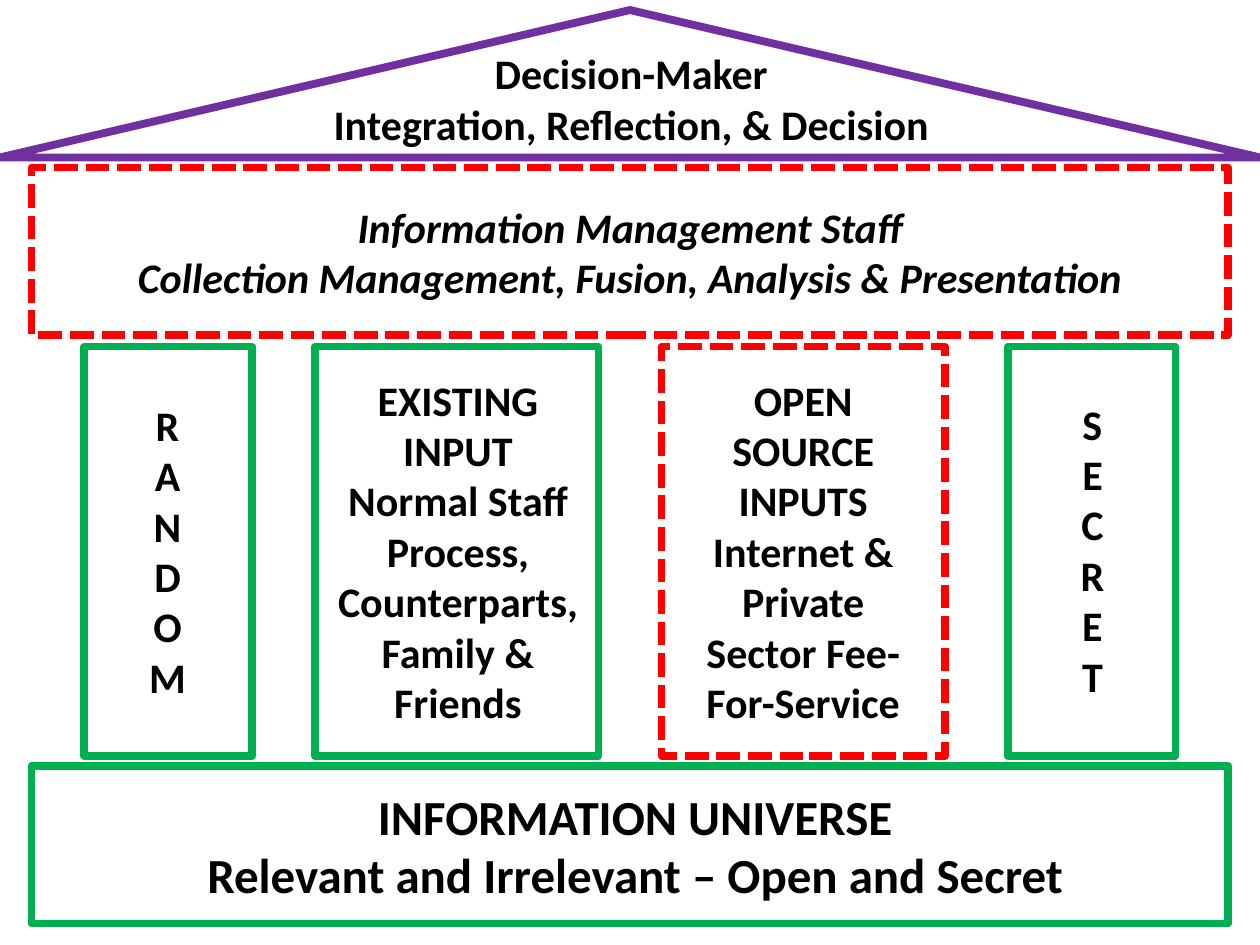
from pptx import Presentation
from pptx.dml.color import RGBColor
from pptx.enum.dml import MSO_LINE
from pptx.enum.shapes import MSO_SHAPE as Shape
from pptx.enum.text import MSO_AUTO_SIZE, PP_ALIGN
from pptx.util import Inches, Pt

PURPLE = RGBColor(0x70, 0x30, 0xA0)
RED = RGBColor(0xFF, 0x00, 0x00)
GREEN = RGBColor(0x00, 0xB0, 0x50)
BLACK = RGBColor(0x00, 0x00, 0x00)

PILLAR_TOP, PILLAR_HEIGHT = 2.75, 3.25

# preset, (left, top, width, height), line colour; red parts are dashed
ROOF = (Shape.ISOSCELES_TRIANGLE, (0, 0.08, 10, 1.17), PURPLE)
BEAM = (Shape.RECTANGLE, (0.25, 1.33, 9.5, 1.33), RED)
BASE = (Shape.RECTANGLE, (0.25, 6.08, 9.5, 1.25), GREEN)
PILLARS = [  # left, width, line colour
    (0.67, 1.33, GREEN),
    (2.5, 2.25, GREEN),
    (5.25, 2.25, RED),
    (8, 1.33, GREEN),
]

# lines, (left, top, width, height), size, italic, wrap
LABELS = [
    (["Decision-Maker", "Integration, Reflection, & Decision"],
     (2.52, 0.33, 4.98, 0.91), 24, False, False),
    (["Information Management Staff",
      "Collection Management, Fusion, Analysis & Presentation"],
     (0.95, 1.55, 8.1, 0.91), 24, True, False),
    (["RANDOM"], (1.08, 3.12, 0.5, 2.52), 24, False, True),
    (["EXISTING INPUT", "Normal Staff Process, Counterparts, Family & Friends"],
     (2.52, 2.92, 2.23, 2.93), 24, False, True),
    (["OPEN SOURCE INPUTS", "Internet & Private Sector Fee-For-Service"],
     (5.46, 2.92, 1.83, 2.93), 24, False, True),
    (["SECRET"], (8.42, 3.11, 0.5, 2.52), 24, False, True),
    (["INFORMATION UNIVERSE", "Relevant and Irrelevant – Open and Secret"],
     (1.5, 6.19, 7.08, 1.04), 28, False, False),
]


def add_outline(page, preset, place, color):
    outline = page.shapes.add_shape(preset, *map(Inches, place))
    outline.shadow.inherit = False
    outline.fill.background()
    outline.line.color.rgb = color
    outline.line.width = Pt(4.5)
    if color == RED:
        outline.line.dash_style = MSO_LINE.SQUARE_DOT


def add_label(page, lines, place, size, italic, wrap):
    box = page.shapes.add_textbox(*map(Inches, place))
    frame = box.text_frame
    frame.word_wrap = wrap
    frame.auto_size = MSO_AUTO_SIZE.SHAPE_TO_FIT_TEXT
    for index, line in enumerate(lines):
        para = frame.add_paragraph() if index else frame.paragraphs[0]
        para.alignment = PP_ALIGN.CENTER
        span = para.add_run()
        span.text = line
        span.font.name = "Calibri"
        span.font.size = Pt(size)
        span.font.bold = True
        span.font.italic = italic
        span.font.color.rgb = BLACK


def main():
    deck = Presentation()
    deck.slide_width, deck.slide_height = Inches(10), Inches(7.5)
    page = deck.slides.add_slide(deck.slide_layouts.get_by_name("Blank"))
    for part in (ROOF, BEAM, BASE):
        add_outline(page, *part)
    for left, width, color in PILLARS:
        place = (left, PILLAR_TOP, width, PILLAR_HEIGHT)
        add_outline(page, Shape.RECTANGLE, place, color)
    for label in LABELS:
        add_label(page, *label)
    deck.save("out.pptx")


if __name__ == "__main__":
    main()
